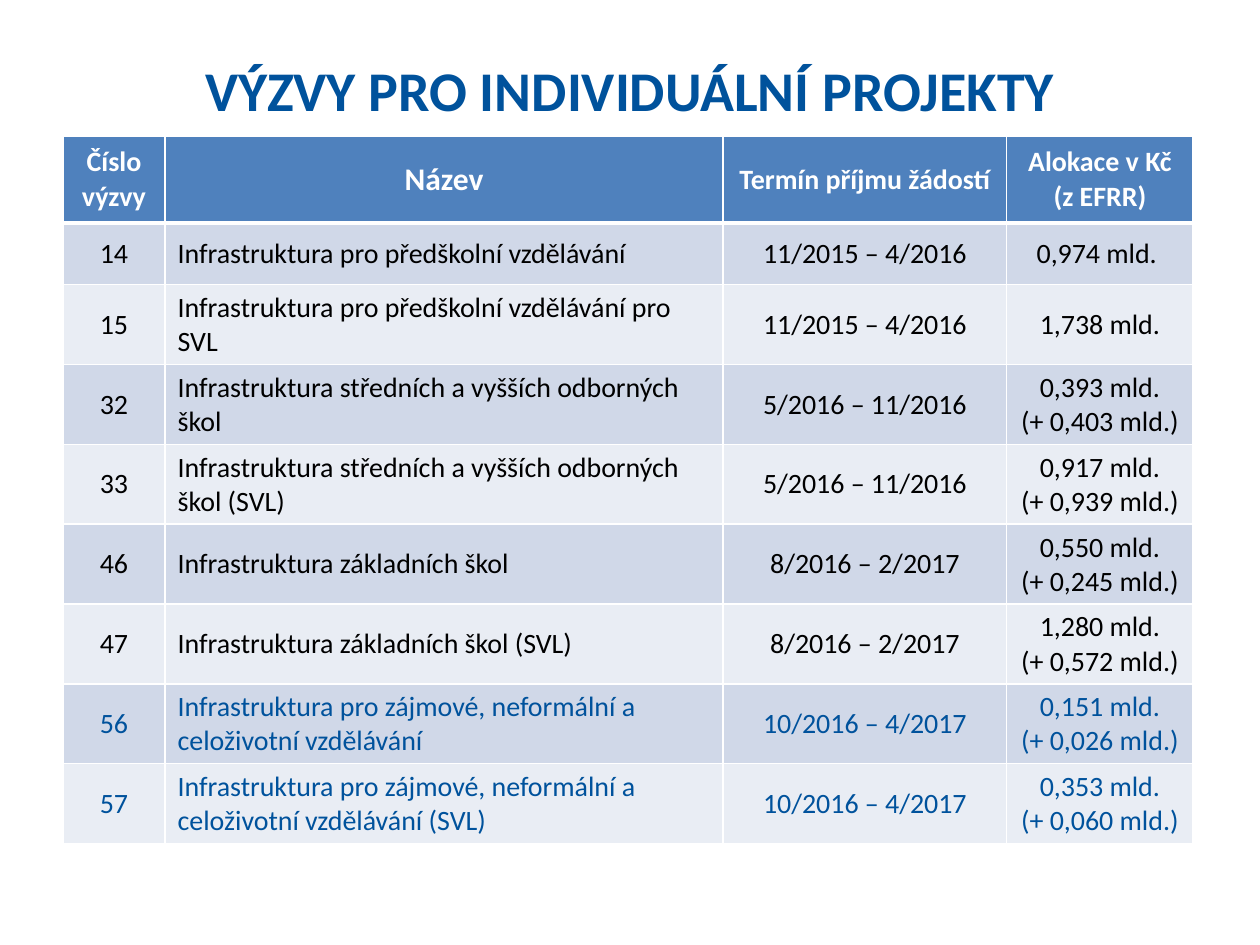
from dataclasses import dataclass

from lxml.etree import SubElement as Sub
from pptx import Presentation
from pptx.dml.color import RGBColor as RGB
from pptx.enum.text import MSO_ANCHOR as Anchor, PP_ALIGN as Align
from pptx.oxml.ns import qn
from pptx.util import Inches, Pt


@dataclass(frozen=True)
class Theme:
    """Colours and type sizes of the slide."""
    font: str = "Calibri"
    blue: str = "00529C"
    head: str = "4F81BD"
    bands: tuple = ("D0D8E8", "E9EDF4")
    white: str = "FFFFFF"
    black: str = "000000"
    title: int = 32
    large: int = 18
    body: int = 16


THEME = Theme()
WIDTHS = (0.81, 4.43, 2.25, 1.48)
HEIGHTS = (0.69, 0.49, 0.52, 0.5, 0.5, 0.59, 0.57, 0.5, 0.62)
HEADS = ("Číslo výzvy", "Název", "Termín příjmu žádostí", "Alokace v Kč\n(z EFRR)")
CALLS = (
    ("14", "Infrastruktura pro předškolní vzdělávání", "11/2015 – 4/2016", "0,974 mld. "),
    ("15", "Infrastruktura pro předškolní vzdělávání pro SVL", "11/2015 – 4/2016", "1,738 mld."),
    ("32", "Infrastruktura středních a vyšších odborných škol", "5/2016 – 11/2016",
     "0,393 mld.\n(+ 0,403 mld.)"),
    ("33", "Infrastruktura středních a vyšších odborných škol (SVL)", "5/2016 – 11/2016",
     "0,917 mld.\n(+ 0,939 mld.) "),
    ("46", "Infrastruktura základních škol", "8/2016 – 2/2017", "0,550 mld.\n(+ 0,245 mld.)"),
    ("47", "Infrastruktura základních škol (SVL)", "8/2016 – 2/2017",
     "1,280 mld.\n(+ 0,572 mld.)"),
    ("56", "Infrastruktura pro zájmové, neformální a celoživotní vzdělávání",
     "10/2016 – 4/2017", "0,151 mld.\n(+ 0,026 mld.)"),
    ("57", "Infrastruktura pro zájmové, neformální a celoživotní vzdělávání (SVL)",
     "10/2016 – 4/2017", "0,353 mld.\n(+ 0,060 mld.)"),
)
NEW = ("56", "57")


def write(frame, text, size, color, bold=False, align=Align.CENTER):
    """Fill a text frame and format its runs."""
    frame.text = text
    for para in frame.paragraphs:
        para.alignment = align
        for run in para.runs:
            font = run.font
            font.name, font.size, font.bold = THEME.font, Pt(size), bold
            font.color.rgb = RGB.from_string(color)


def edge(cell, side, width):
    """Draw one white border of a cell."""
    line = Sub(cell._tc.get_or_add_tcPr(), qn(f"a:ln{side}"), w=str(Pt(width)))
    Sub(Sub(line, qn("a:solidFill")), qn("a:srgbClr"), val=THEME.white)


def paint(cell, fill, top=1, bottom=1):
    """Set the borders, fill and anchor of a cell."""
    for side, width in zip("LRTB", (1, 1, top, bottom)):
        edge(cell, side, width)
    cell.fill.solid()
    cell.fill.fore_color.rgb = RGB.from_string(fill)
    cell.vertical_anchor = Anchor.MIDDLE


def add_title(slide, text):
    """Add the slide heading."""
    box = slide.shapes.add_textbox(Inches(0.5), Inches(0.16), Inches(9), Inches(1.09))
    frame = box.text_frame
    frame.word_wrap = True
    frame.vertical_anchor = Anchor.MIDDLE
    write(frame, text, THEME.title, THEME.blue, True)


def add_calls(slide):
    """Add the table of calls."""
    table = slide.shapes.add_table(
        len(CALLS) + 1, len(HEADS), Inches(0.5), Inches(1.08),
        Inches(sum(WIDTHS)), Inches(sum(HEIGHTS))).table
    for col, width in zip(table.columns, WIDTHS):
        col.width = Inches(width)
    for row, height in zip(table.rows, HEIGHTS):
        row.height = Inches(height)
    for col, text in enumerate(HEADS):
        cell = table.cell(0, col)
        paint(cell, THEME.head, bottom=3)
        size = THEME.large if col == 1 else THEME.body
        write(cell.text_frame, text, size, THEME.white, True)
    for row, call in enumerate(CALLS, 1):
        color = THEME.blue if call[0] in NEW else THEME.black
        for col, text in enumerate(call):
            cell = table.cell(row, col)
            paint(cell, THEME.bands[(row - 1) % 2], top=3 if row == 1 else 1)
            align = Align.LEFT if col == 1 else Align.CENTER
            write(cell.text_frame, text, THEME.body, color, align=align)


def main():
    """Build and save the slide."""
    deck = Presentation()
    deck.slide_width, deck.slide_height = Inches(10), Inches(7.5)
    slide = deck.slides.add_slide(deck.slide_layouts[6])
    add_title(slide, "VÝZVY PRO INDIVIDUÁLNÍ PROJEKTY")
    add_calls(slide)
    deck.save("out.pptx")


if __name__ == "__main__":
    main()
